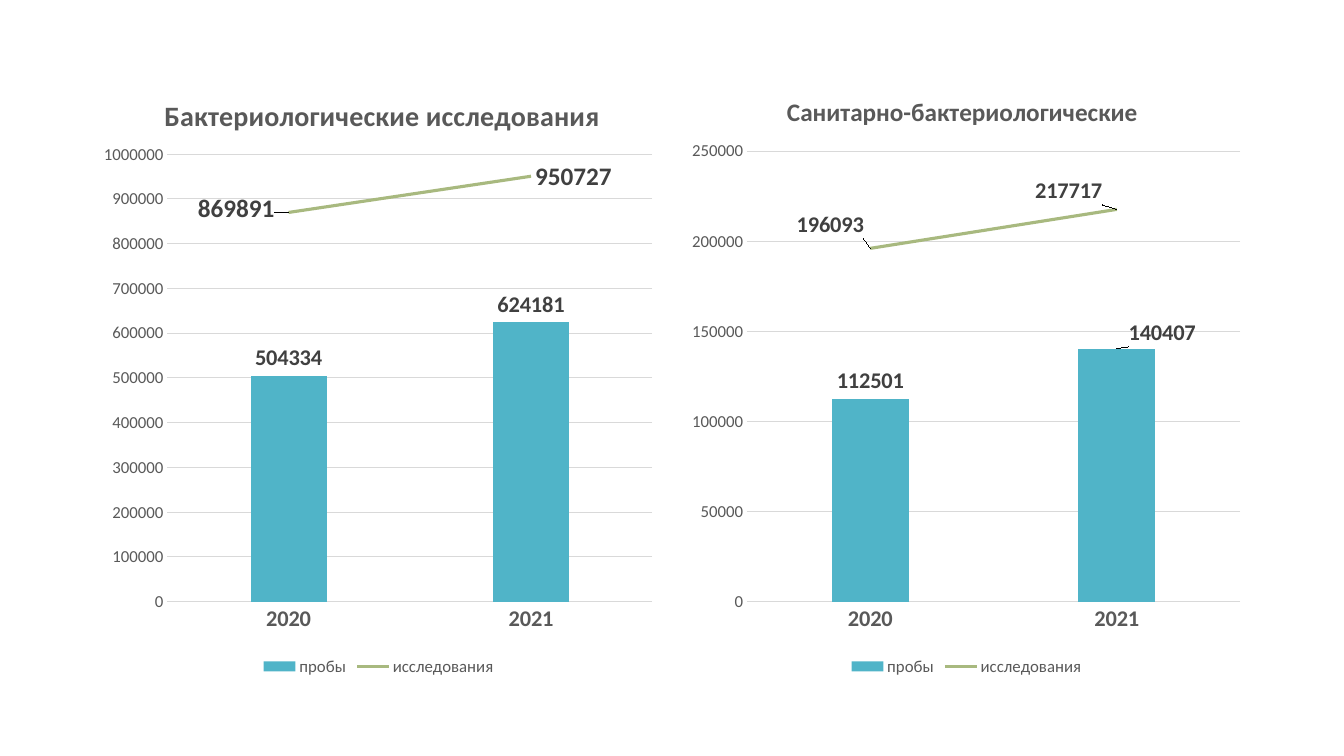
from lxml import etree
from pptx import Presentation
from pptx.chart.data import CategoryChartData
from pptx.dml.color import RGBColor
from pptx.enum.chart import XL_CHART_TYPE as CT
from pptx.enum.chart import XL_LABEL_POSITION as POS
from pptx.enum.chart import XL_LEGEND_POSITION as LEGEND
from pptx.enum.chart import XL_MARKER_STYLE as MARKER
from pptx.enum.chart import XL_TICK_MARK as TICK
from pptx.oxml import parse_xml
from pptx.oxml.ns import nsdecls, qn
from pptx.util import Inches, Pt

COLORS = {"samples": "50B4C8", "studies": "A8B97F", "text": "595959",
          "label": "404040", "grid": "D9D9D9"}
FONT = "Calibri"
YEARS = ("2020", "2021")
CHART_W, CHART_H = 5.67, 6.13

CHARTS = [
    {"title": "Бактериологические исследования", "left": 0.92,
     "title_size": 20, "title_at": (0.66, 0.28),
     "plot": (0.74, 0.91, 4.81, 4.44), "overlap": 0,
     "max": 1000000, "step": 100000,
     "samples": (504334, 624181), "studies": (869891, 950727),
     "studies_size": 18,
     "samples_shift": {}, "studies_shift": {0: (-0.94, -0.04)}},
    {"title": "Санитарно-бактериологические", "left": 6.75,
     "title_size": 18, "title_at": (1.01, 0.27),
     "plot": (0.66, 0.88, 4.89, 4.47), "overlap": -27,
     "max": 250000, "step": 50000,
     "samples": (112501, 140407), "studies": (196093, 217717),
     "studies_size": 16,
     "samples_shift": {1: (0.45, 0.02)},
     "studies_shift": {0: (-0.77, -0.23), 1: (-0.85, -0.18)}},
]


def rgb(name):
    return RGBColor.from_string(COLORS[name])


def style_font(font, size, color="text", bold=False):
    font.name = FONT
    font.size = Pt(size)
    font.bold = bold
    font.color.rgb = rgb(color)


def style_line(line, color, width):
    line.color.rgb = rgb(color)
    line.width = Pt(width)


def make_layout(box, fixed=False):
    layout = etree.Element(qn("c:layout"))
    manual = etree.SubElement(layout, qn("c:manualLayout"))
    if len(box) == 4:
        etree.SubElement(manual, qn("c:layoutTarget")).set("val", "inner")
    if fixed:
        for tag in ("xMode", "yMode"):
            etree.SubElement(manual, qn(f"c:{tag}")).set("val", "edge")
    for tag, length, full in zip("xywh", box, (CHART_W, CHART_H) * 2):
        etree.SubElement(manual, qn(f"c:{tag}")).set("val", f"{length / full:.4f}")
    return layout


def set_layout(parent, index, layout):
    for old in parent.findall(qn("c:layout")):
        parent.remove(old)
    parent.insert(index, layout)


def move_to_line(chart):
    bar = chart.plots[0]._element
    ser = bar.findall(qn("c:ser"))[1]
    for tag in ser.findall(qn("c:invertIfNegative")):
        ser.remove(tag)
    line = parse_xml(
        f'<c:lineChart {nsdecls("c")}><c:grouping val="standard"/>'
        '<c:varyColors val="0"/><c:marker val="1"/></c:lineChart>')
    line.insert(2, ser)
    for axis in bar.findall(qn("c:axId")):
        etree.SubElement(line, qn("c:axId")).set("val", axis.get("val"))
    bar.addnext(line)


def add_labels(series, size, position, shifts):
    labels = series.data_labels
    labels.show_value = True
    labels.position = position
    style_font(labels.font, size, "label", True)
    for i, shift in shifts.items():
        label = series.points[i].data_label
        label.position = position
        style_font(label.font, size, "label", True)
        element = series._element.xpath(f"c:dLbls/c:dLbl[c:idx/@val='{i}']")[0]
        set_layout(element, 1, make_layout(shift))


def style_axes(chart, item):
    cat, val = chart.category_axis, chart.value_axis
    for axis, size, bold in ((cat, 16, True), (val, 12, False)):
        axis.major_tick_mark = axis.minor_tick_mark = TICK.NONE
        style_font(axis.tick_labels.font, size, bold=bold)
    style_line(cat.format.line, "grid", 0.75)
    val.format.line.fill.background()
    style_line(val.major_gridlines.format.line, "grid", 0.75)
    val.minimum_scale, val.maximum_scale = 0, item["max"]
    val.major_unit = item["step"]


def add_title(chart, item):
    tf = chart.chart_title.text_frame
    tf.text = item["title"]
    style_font(tf.paragraphs[0].runs[0].font, item["title_size"], bold=True)
    chart.chart_title.include_in_layout = False
    set_layout(chart.chart_title._element, 1, make_layout(item["title_at"], True))


def add_combo_chart(slide, item, left, top):
    data = CategoryChartData()
    data.categories = YEARS
    data.add_series("пробы", item["samples"])
    data.add_series("исследования", item["studies"])
    chart = slide.shapes.add_chart(
        CT.COLUMN_CLUSTERED, Inches(left), Inches(top),
        Inches(CHART_W), Inches(CHART_H), data).chart
    chart.font.name = FONT
    chart.font.size = Pt(10)
    add_title(chart, item)
    style_axes(chart, item)
    move_to_line(chart)

    columns, lines = chart.plots
    columns.gap_width, columns.overlap = 219, item["overlap"]
    columns.vary_by_categories = False
    samples, studies = columns.series[0], lines.series[0]
    samples.format.fill.solid()
    samples.format.fill.fore_color.rgb = rgb("samples")
    style_line(studies.format.line, "studies", 2.25)
    studies.smooth = False
    studies.marker.style = MARKER.NONE
    add_labels(samples, 16, POS.OUTSIDE_END, item["samples_shift"])
    add_labels(studies, item["studies_size"], POS.RIGHT, item["studies_shift"])

    chart.has_legend = True
    chart.legend.position = LEGEND.BOTTOM
    chart.legend.include_in_layout = False
    style_font(chart.legend.font, 12)
    plot_area = columns._element.getparent()
    set_layout(plot_area, 0, make_layout(item["plot"], True))


def main():
    prs = Presentation()
    prs.slide_width, prs.slide_height = Inches(13.33), Inches(7.5)
    slide = prs.slides.add_slide(prs.slide_layouts[6])
    for item in CHARTS:
        add_combo_chart(slide, item, item["left"], 0.62)
    prs.save("out.pptx")


if __name__ == "__main__":
    main()
